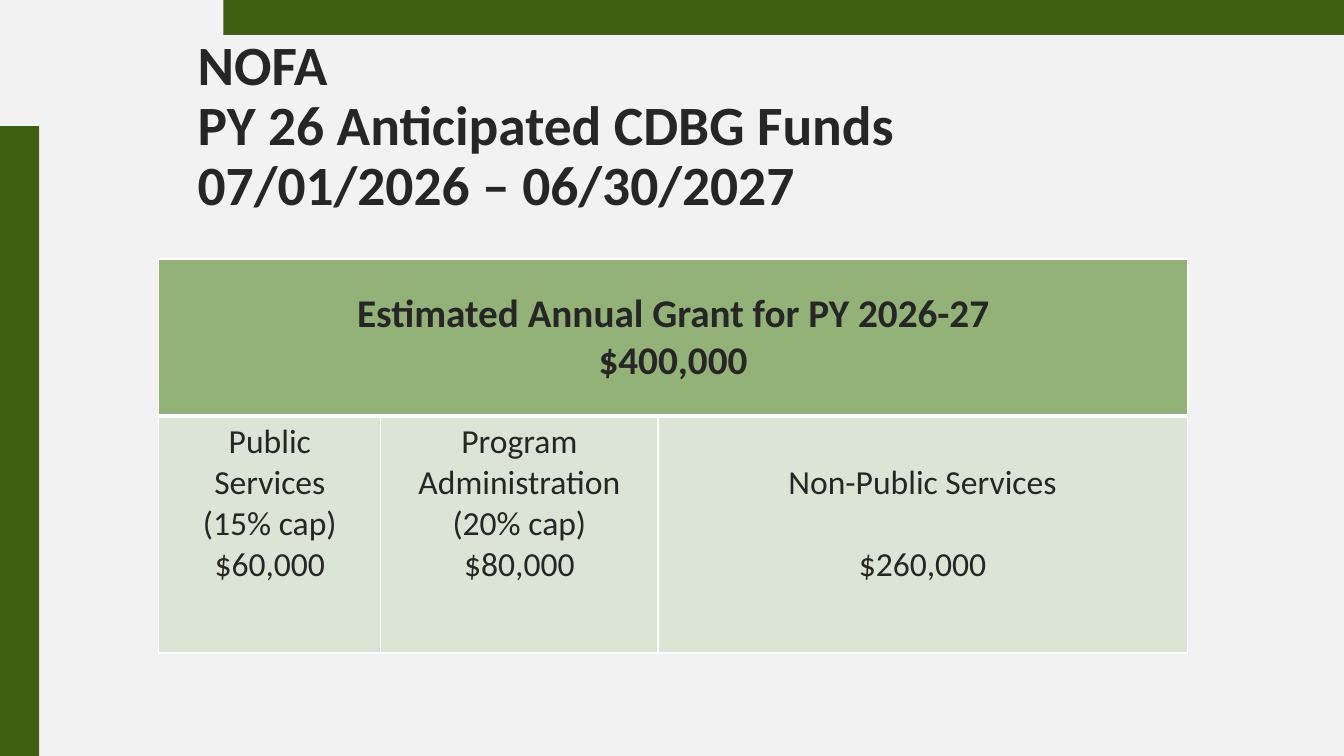
from dataclasses import dataclass

from lxml.etree import SubElement
from pptx import Presentation
from pptx.dml.color import RGBColor
from pptx.enum.shapes import MSO_SHAPE as Shape
from pptx.enum.text import MSO_ANCHOR as Anchor, MSO_AUTO_SIZE as AutoSize, PP_ALIGN as Align
from pptx.oxml.ns import qn
from pptx.slide import Slide
from pptx.table import _Cell as Cell
from pptx.text.text import _Paragraph as Paragraph
from pptx.util import Pt


@dataclass(frozen=True)
class Theme:
    font: str = "Calibri"
    background: str = "F2F2F2"
    bar: str = "3F6011"
    header: str = "93B278"
    body: str = "DCE4D6"
    border: str = "FFFFFF"
    text: str = "262626"
    title_size: float = 39.6
    header_size: float = 28
    body_size: float = 24
    body_line: float = 29.3


@dataclass(frozen=True)
class Bar:
    left: float
    top: float
    width: float
    height: float


@dataclass(frozen=True)
class Fund:
    lines: tuple[str, ...]
    column_width: float
    spread: bool = False


THEME = Theme()
BARS = (Bar(0, 90, 28, 450), Bar(159.5, 0, 800.5, 25))
TITLE_LINES = ("NOFA", "PY 26 Anticipated CDBG Funds", "07/01/2026 – 06/30/2027")
GRANT_LINES = ("Estimated Annual Grant for PY 2026-27", "$400,000")
FUNDS = (
    Fund(("Public", "Services", "(15% cap)", "$60,000"), 158.5),
    Fund(("Program", "Administration", "(20% cap)", "$80,000"), 198),
    Fund(("Non-Public Services", "$260,000"), 378, spread=True),
)
ROW_HEIGHTS = (112.3, 169.2)


def format_runs(paragraph: Paragraph, size: float, bold: bool) -> None:
    for run in paragraph.runs:
        run.font.name = THEME.font
        run.font.size = Pt(size)
        run.font.bold = bold
        run.font.color.rgb = RGBColor.from_string(THEME.text)


def draw_bar(slide: Slide, bar: Bar) -> None:
    shape = slide.shapes.add_shape(
        Shape.RECTANGLE, Pt(bar.left), Pt(bar.top), Pt(bar.width), Pt(bar.height)
    )
    shape.shadow.inherit = False
    shape.fill.solid()
    shape.fill.fore_color.rgb = RGBColor.from_string(THEME.bar)
    shape.line.fill.background()


def draw_title(slide: Slide) -> None:
    title = slide.shapes.title
    title.left, title.top, title.width, title.height = Pt(134), Pt(26), Pt(760), Pt(130)
    frame = title.text_frame
    frame.text = "\v".join(TITLE_LINES)
    frame.word_wrap = True
    frame.auto_size = AutoSize.NONE
    frame.vertical_anchor = Anchor.MIDDLE
    frame.margin_top = frame.margin_bottom = 0
    paragraph = frame.paragraphs[0]
    paragraph.alignment = Align.LEFT
    paragraph.line_spacing = 0.9
    format_runs(paragraph, THEME.title_size, True)


def style_cell(cell: Cell, fill: str, top: float, bottom: float) -> None:
    properties = cell._tc.get_or_add_tcPr()
    for side, width in (("L", 1), ("R", 1), ("T", top), ("B", bottom)):
        line = SubElement(properties, qn(f"a:ln{side}"), w=str(Pt(width)))
        solid = SubElement(line, qn("a:solidFill"))
        SubElement(solid, qn("a:srgbClr"), val=THEME.border)
    cell.fill.solid()
    cell.fill.fore_color.rgb = RGBColor.from_string(fill)


def write_cell(cell: Cell, lines: tuple[str, ...], size: float, bold: bool, gap: float = 0) -> None:
    cell.text_frame.text = "\n".join(lines)
    for index, paragraph in enumerate(cell.text_frame.paragraphs):
        paragraph.alignment = Align.CENTER
        if index and gap:
            paragraph.space_before = Pt(gap)
        format_runs(paragraph, size, bold)


def draw_table(slide: Slide) -> None:
    width = sum(fund.column_width for fund in FUNDS)
    frame = slide.shapes.add_table(
        len(ROW_HEIGHTS), len(FUNDS), Pt(113.5), Pt(185), Pt(width), Pt(sum(ROW_HEIGHTS))
    )
    table = frame.table
    table.first_row = table.horz_banding = False
    for row, height in zip(table.rows, ROW_HEIGHTS):
        row.height = Pt(height)
    for index, fund in enumerate(FUNDS):
        table.columns[index].width = Pt(fund.column_width)
        style_cell(table.cell(0, index), THEME.header, 1, 3)
        cell = table.cell(1, index)
        style_cell(cell, THEME.body, 3, 1)
        gap = THEME.body_line if fund.spread else 0
        cell.margin_top = Pt(3.6 + gap)
        write_cell(cell, fund.lines, THEME.body_size, False, gap)
    grant = table.cell(0, 0)
    grant.merge(table.cell(0, len(FUNDS) - 1))
    grant.vertical_anchor = Anchor.MIDDLE
    write_cell(grant, GRANT_LINES, THEME.header_size, True)


def main() -> None:
    presentation = Presentation()
    presentation.slide_width, presentation.slide_height = Pt(960), Pt(540)
    slide = presentation.slides.add_slide(presentation.slide_layouts[5])
    slide.background.fill.solid()
    slide.background.fill.fore_color.rgb = RGBColor.from_string(THEME.background)
    for bar in BARS:
        draw_bar(slide, bar)
    draw_title(slide)
    draw_table(slide)
    presentation.save("out.pptx")


if __name__ == "__main__":
    main()
